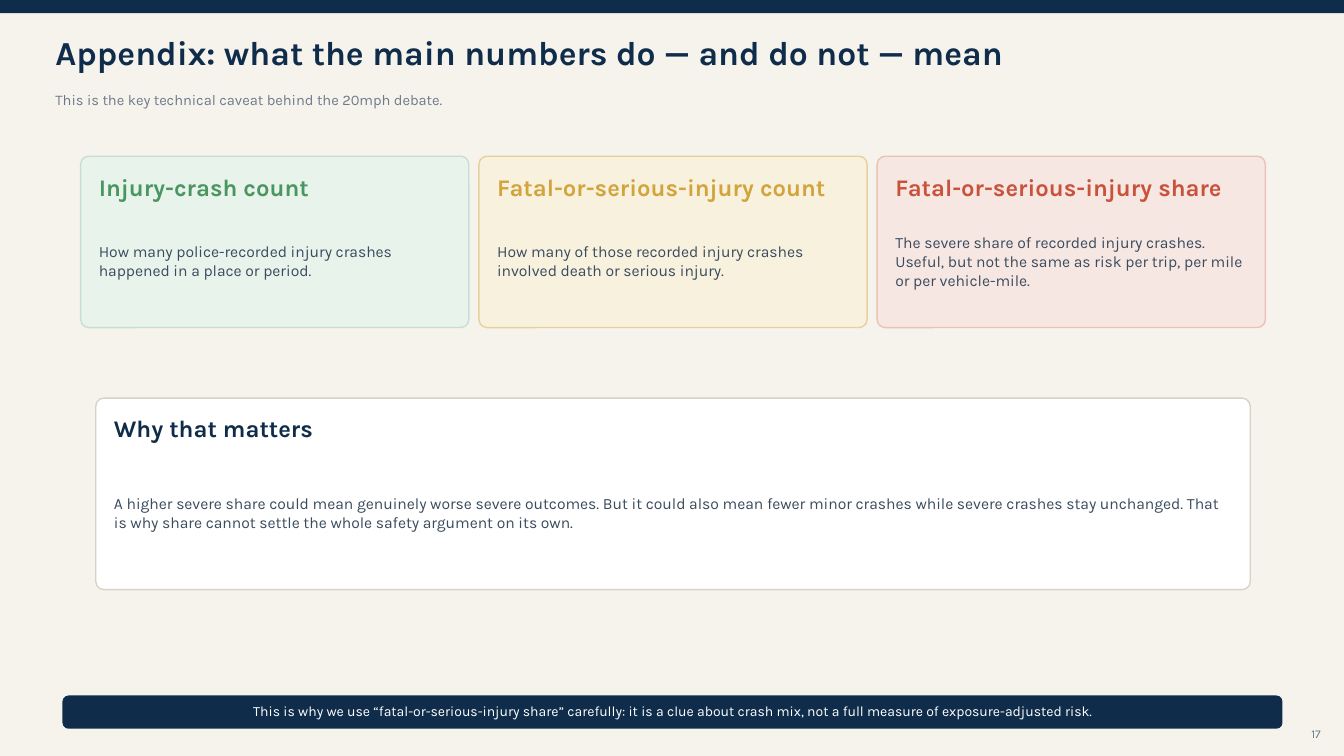
from pptx import Presentation
from pptx.dml.color import RGBColor
from pptx.enum.shapes import MSO_SHAPE
from pptx.enum.text import MSO_ANCHOR, MSO_AUTO_SIZE, PP_ALIGN
from pptx.util import Inches, Pt

RECT = MSO_SHAPE.RECTANGLE
ROUND = MSO_SHAPE.ROUNDED_RECTANGLE
MIDDLE = MSO_ANCHOR.MIDDLE
FIXED = MSO_AUTO_SIZE.NONE
LEFT, CENTER, RIGHT = PP_ALIGN.LEFT, PP_ALIGN.CENTER, PP_ALIGN.RIGHT

FONT = "Karla"
PAPER = RGBColor(0xF6, 0xF3, 0xED)
NAVY = RGBColor(0x0F, 0x2D, 0x4A)
SLATE = RGBColor(0x39, 0x4B, 0x5E)
GREY = RGBColor(0x6C, 0x7B, 0x8B)
WHITE = RGBColor(0xFF, 0xFF, 0xFF)
STONE = RGBColor(0xD8, 0xD1, 0xC6)
GREEN = RGBColor(0x4A, 0x96, 0x60)
MINT = RGBColor(0xE8, 0xF3, 0xEB)
SAGE = RGBColor(0xC8, 0xDE, 0xCF)
GOLD = RGBColor(0xD2, 0xA4, 0x3C)
CREAM = RGBColor(0xF8, 0xF1, 0xDE)
SAND = RGBColor(0xE3, 0xD3, 0x9A)
RED = RGBColor(0xC9, 0x52, 0x3C)
BLUSH = RGBColor(0xF7, 0xE7, 0xE2)
ROSE = RGBColor(0xEA, 0xC2, 0xB8)

CARDS = [
    ("Injury-crash count",
     "How many police-recorded injury crashes happened in a place or period.",
     GREEN, MINT, SAGE),
    ("Fatal-or-serious-injury count",
     "How many of those recorded injury crashes involved death or serious injury.",
     GOLD, CREAM, SAND),
    ("Fatal-or-serious-injury share",
     "The severe share of recorded injury crashes. Useful, but not the same "
     "as risk per trip, per mile or per vehicle-mile.",
     RED, BLUSH, ROSE),
]


def add_text(slide, text, x, y, w, h, size=11.2, color=SLATE, bold=False,
             align=LEFT, holder=None):
    box = holder or slide.shapes.add_textbox(0, 0, 0, 0)
    box.left, box.top = Inches(x), Inches(y)
    box.width, box.height = Inches(w), Inches(h)
    frame = box.text_frame
    frame.word_wrap = True
    frame.auto_size = FIXED
    frame.vertical_anchor = MIDDLE
    frame.margin_left = frame.margin_right = 0
    frame.margin_top = frame.margin_bottom = 0
    para = frame.paragraphs[0]
    para.alignment = align
    run = para.add_run()
    run.text = text
    font = run.font
    font.name, font.size, font.bold = FONT, Pt(size), bold
    font.color.rgb = color


def add_panel(slide, x, y, w, h, fill, line=None, radius=0):
    kind = ROUND if radius else RECT
    panel = slide.shapes.add_shape(kind, Inches(x), Inches(y), Inches(w), Inches(h))
    panel.shadow.inherit = False
    panel.fill.solid()
    panel.fill.fore_color.rgb = fill
    if radius:
        panel.adjustments[0] = radius / h
    if line is None:
        panel.line.fill.background()
    else:
        panel.line.color.rgb = line
        panel.line.width = Pt(1)


def add_card(slide, x, y, w, h, head, body, color, fill, line):
    add_panel(slide, x, y, w, h, fill, line, radius=0.08)
    inner = w - 0.36
    add_text(slide, head, x + 0.18, y + 0.16, inner, 0.28,
             size=17, color=color, bold=True)
    add_text(slide, body, x + 0.18, y + 0.54, inner, h - 0.7)


def main():
    deck = Presentation()
    deck.slide_width, deck.slide_height = Inches(13.33), Inches(7.5)
    slide = deck.slides.add_slide(deck.slide_layouts[5])
    slide.background.fill.solid()
    slide.background.fill.fore_color.rgb = PAPER

    add_panel(slide, 0, 0, 13.33, 0.13, NAVY)
    add_text(slide, "Appendix: what the main numbers do — and do not — mean",
             0.55, 0.34, 12, 0.36, size=24, color=NAVY, bold=True,
             holder=slide.shapes.title)
    add_text(slide, "This is the key technical caveat behind the 20mph debate.",
             0.55, 0.82, 12, 0.34, size=10.5, color=GREY)
    add_text(slide, "17", 12.9, 7.2, 0.2, 0.15, size=8.5, color=GREY, align=RIGHT)

    for i, card in enumerate(CARDS):
        add_card(slide, 0.8 + 3.95 * i, 1.55, 3.85, 1.7, *card)
    add_card(slide, 0.95, 3.95, 11.45, 1.9, "Why that matters",
             "A higher severe share could mean genuinely worse severe outcomes. "
             "But it could also mean fewer minor crashes while severe crashes stay "
             "unchanged. That is why share cannot settle the whole safety argument "
             "on its own.", NAVY, WHITE, STONE)

    add_panel(slide, 0.62, 6.9, 12.1, 0.33, NAVY, radius=0.06)
    add_text(slide, "This is why we use “fatal-or-serious-injury share” carefully: "
             "it is a clue about crash mix, not a full measure of "
             "exposure-adjusted risk.",
             0.82, 6.96, 11.7, 0.18, size=10, color=WHITE, align=CENTER)
    deck.save("out.pptx")


if __name__ == "__main__":
    main()
